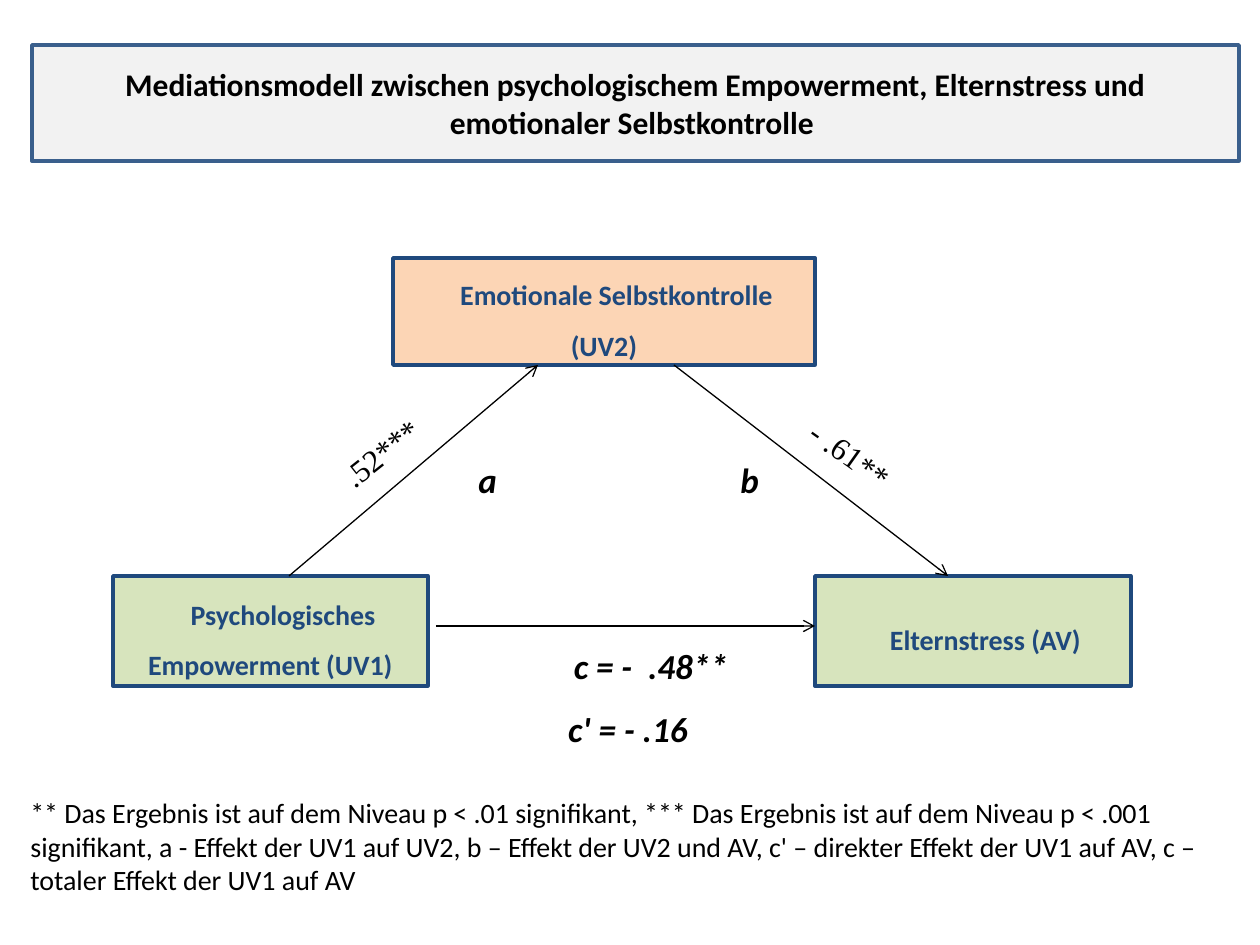
from lxml import etree
from pptx import Presentation
from pptx.dml.color import RGBColor
from pptx.enum.shapes import MSO_CONNECTOR, MSO_SHAPE
from pptx.enum.text import MSO_ANCHOR, MSO_AUTO_SIZE, PP_ALIGN
from pptx.oxml.ns import qn
from pptx.util import Emu, Pt

STRAIGHT = MSO_CONNECTOR.STRAIGHT
RECTANGLE = MSO_SHAPE.RECTANGLE
MIDDLE = MSO_ANCHOR.MIDDLE
NO_AUTOFIT = MSO_AUTO_SIZE.NONE
LEFT, CENTER, JUSTIFY = PP_ALIGN.LEFT, PP_ALIGN.CENTER, PP_ALIGN.JUSTIFY

BLACK = RGBColor(0x00, 0x00, 0x00)
NAVY = RGBColor(0x1F, 0x49, 0x7D)
STEEL = RGBColor(0x3A, 0x5F, 0x8C)
PEACH = RGBColor(0xFC, 0xD5, 0xB5)
GREEN = RGBColor(0xD7, 0xE4, 0xBD)
GRAY = RGBColor(0xF2, 0xF2, 0xF2)

PX_PER_INCH = 126
INDENT = 25

TITLE = ("Mediationsmodell zwischen psychologischem Empowerment, "
         "Elternstress und emotionaler Selbstkontrolle ")
NOTE = ("** Das Ergebnis ist auf dem Niveau p < .01 signifikant, "
        "*** Das Ergebnis ist auf dem Niveau p < .001 signifikant, "
        "a - Effekt der UV1 auf UV2, b – Effekt der UV2 und AV, "
        "c' – direkter Effekt der UV1 auf AV, c – totaler Effekt der UV1 auf AV")
VARIABLES = [
    ("Emotionale Selbstkontrolle (UV2)", (393, 258, 422, 107), PEACH),
    ("Psychologisches Empowerment (UV1)", (113, 576, 315, 110), GREEN),
    ("Elternstress (AV)", (815, 576, 316, 110), GREEN),
]
PATHS = [
    ((289, 576), (538, 365)),
    ((674, 365), (948, 576)),
    ((436, 626), (815, 626)),
]
EFFECTS = [
    ("a", (446, 445, 58, 62)),
    ("b", (708, 445, 58, 62)),
    ("c = -  .48**", (524, 630, 229, 64)),
    ("c' = - .16", (504, 694, 223, 62)),
]
COEFFICIENTS = [
    (" .52***", (291, 420, 173, 63), 321.7),
    ("- .61**", (769, 423, 173, 63), 35.4),
]


def px(n):
    """Turn whole pixels into EMU."""
    return Emu(round(n * 914400 / PX_PER_INCH))


def write(shape, text, size, align, color=BLACK, font="Calibri",
          bold=False, italic=False, spacing=None, after=0, indent=0):
    """Fill a shape with one formatted paragraph."""
    tf = shape.text_frame
    tf.word_wrap = True
    tf.auto_size = NO_AUTOFIT
    tf.vertical_anchor = MIDDLE
    p = tf.paragraphs[0]
    p.alignment = align
    p.space_after = Pt(after)
    if spacing:
        p.line_spacing = spacing
    if indent:
        pPr = p._p.get_or_add_pPr()
        pPr.set("marL", "0")
        pPr.set("indent", str(px(indent)))
    r = p.add_run()
    r.text = text
    r.font.name = font
    r.font.size = Pt(size)
    r.font.bold = bold
    r.font.italic = italic
    r.font.color.rgb = color


def paint(shape, fill, line):
    """Give a shape a solid fill and a two-point outline."""
    shape.fill.solid()
    shape.fill.fore_color.rgb = fill
    shape.line.color.rgb = line
    shape.line.width = Pt(2)


def set_title(s):
    """Format the title placeholder as a rounded banner."""
    sp = s.shapes.title
    sp.left, sp.top, sp.width, sp.height = map(px, (32, 45, 1207, 116))
    geom = etree.SubElement(sp._element.spPr, qn("a:prstGeom"), prst="roundRect")
    etree.SubElement(geom, qn("a:avLst"))
    paint(sp, GRAY, STEEL)
    write(sp, TITLE, 18, CENTER, bold=True)


def add_variable(s, text, box, fill):
    """Add the rectangle of one model variable."""
    sp = s.shapes.add_shape(RECTANGLE, *map(px, box))
    sp.shadow.inherit = False
    paint(sp, fill, NAVY)
    write(sp, text, 16, CENTER, NAVY, bold=True, spacing=1.5, indent=INDENT)


def add_path(s, start, end):
    """Add a thin arrow between two points."""
    line = s.shapes.add_connector(STRAIGHT, *map(px, start + end))
    line.line.color.rgb = BLACK
    line.line.width = Pt(0.75)
    etree.SubElement(line.line._get_or_add_ln(), qn("a:tailEnd"), type="arrow")
    etree.SubElement(line._element.spPr, qn("a:effectLst"))


def add_label(s, text, box, size, align, rotation=0, **style):
    """Add a text box, turned if needed."""
    tb = s.shapes.add_textbox(*map(px, box))
    tb.rotation = rotation
    write(tb, text, size, align, **style)


def main():
    """Build the mediation model slide."""
    prs = Presentation()
    prs.slide_width, prs.slide_height = px(1260), px(945)
    s = prs.slides.add_slide(prs.slide_layouts[5])
    set_title(s)
    for text, box, fill in VARIABLES:
        add_variable(s, text, box, fill)
    for start, end in PATHS:
        add_path(s, start, end)
    label = {"spacing": 1.15, "after": 10, "indent": INDENT}
    for text, box in EFFECTS:
        add_label(s, text, box, 20, CENTER, bold=True, italic=True, **label)
    for text, box, rotation in COEFFICIENTS:
        add_label(s, text, box, 18, JUSTIFY, rotation,
                  font="Times New Roman", **label)
    add_label(s, NOTE, (18, 788, 1196, 116), 16, LEFT)
    prs.save("out.pptx")


if __name__ == "__main__":
    main()
